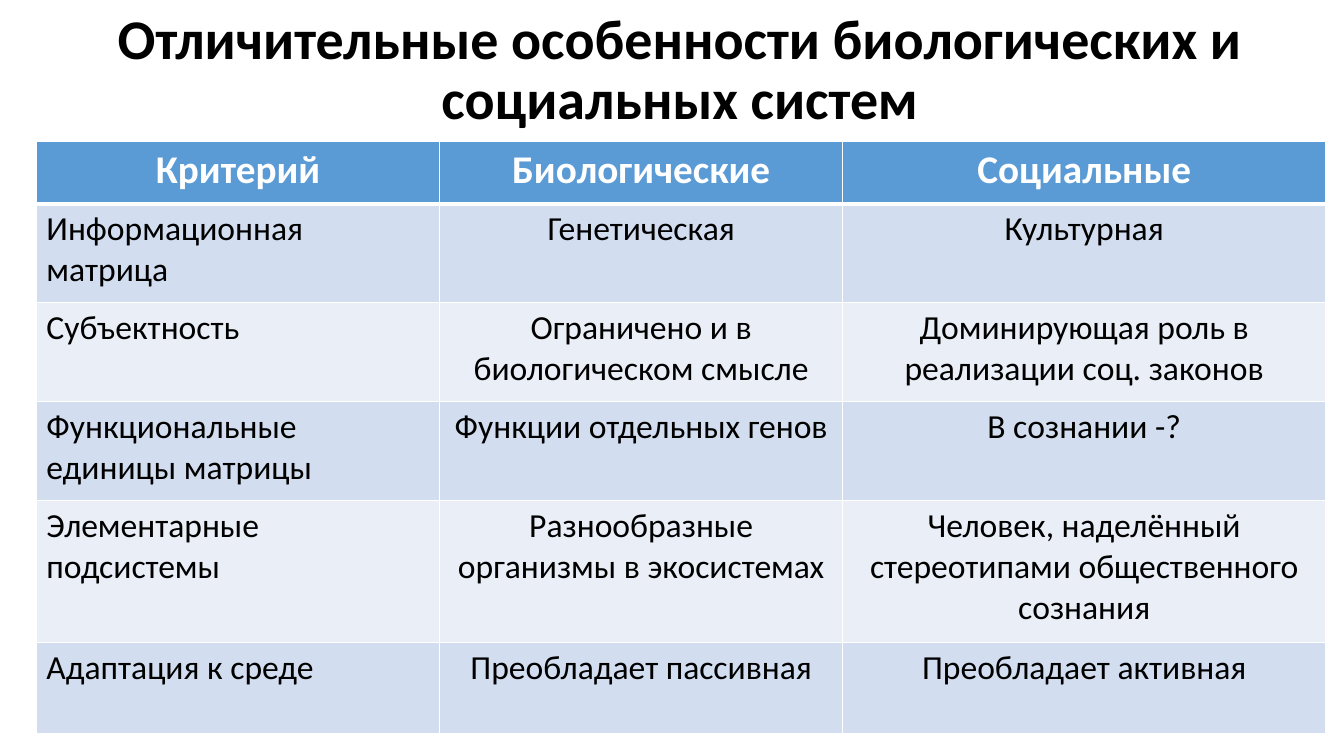
from lxml.etree import SubElement as Sub
from pptx import Presentation
from pptx.dml.color import RGBColor as Rgb
from pptx.enum.text import MSO_ANCHOR as Anchor, PP_ALIGN as Align
from pptx.oxml.ns import qn
from pptx.util import Pt

HUES = {"text": "000000", "white": "FFFFFF", "head": "5B9BD5",
        "odd": "D2DEEF", "even": "EAEFF7"}

COLS = [288, 288, 345]
HIGHS = [44.6, 70.6, 70.6, 70.6, 101.5, 65.5]
ROWS = [
    ("Критерий", "Биологические", "Социальные"),
    ("Информационная матрица", "Генетическая", "Культурная"),
    ("Субъектность", "Ограничено и в биологическом смысле",
     "Доминирующая роль в реализации соц. законов"),
    ("Функциональные единицы матрицы", "Функции отдельных генов",
     "В сознании -?"),
    ("Элементарные подсистемы", "Разнообразные организмы в экосистемах",
     "Человек, наделённый стереотипами общественного сознания"),
    ("Адаптация к среде", "Преобладает пассивная", "Преобладает активная"),
]
JUST = {1, 4}  # rows whose first cell is justified


class Deck:
    def __init__(self, slide, face="Calibri"):
        self.slide = slide
        self.face = face

    def style(self, para, size, hue, bold, align):
        para.alignment = align
        font = para.font
        font.name, font.size, font.bold = self.face, Pt(size), bold
        font.color.rgb = Rgb.from_string(HUES[hue])

    def title(self, text, *box):
        frame = self.slide.shapes.add_textbox(*map(Pt, box)).text_frame
        frame.word_wrap = True
        frame.vertical_anchor = Anchor.MIDDLE
        frame.text = text
        para = frame.paragraphs[0]
        para.line_spacing = 0.9
        self.style(para, 40, "text", True, Align.CENTER)

    def edges(self, cell, base):
        props = cell._tc.get_or_add_tcPr()
        sides = {"lnL": 1, "lnR": 1, "lnT": 1, "lnB": base}
        for spot, (side, width) in enumerate(sides.items()):
            line = Sub(props, qn(f"a:{side}"), w=str(Pt(width)))
            fill = Sub(line, qn("a:solidFill"))
            Sub(fill, qn("a:srgbClr"), val=HUES["white"])
            props.insert(spot, line)

    def cell(self, cell, text, row, col):
        head = row == 0
        hue = "head" if head else "odd" if row % 2 else "even"
        cell.fill.solid()
        cell.fill.fore_color.rgb = Rgb.from_string(HUES[hue])
        self.edges(cell, 3 if head else 1)
        cell.text = text
        align = Align.CENTER
        if col == 0 and not head:
            align = Align.JUSTIFY if row in JUST else Align.LEFT
        self.style(cell.text_frame.paragraphs[0], 28 if head else 24,
                   "white" if head else "text", head, align)

    def table(self, rows, left, top, wides, highs):
        box = map(Pt, (left, top, sum(wides), sum(highs)))
        grid = self.slide.shapes.add_table(
            len(rows), len(wides), *box).table
        for col, wide in zip(grid.columns, wides):
            col.width = Pt(wide)
        for row, high in zip(grid.rows, highs):
            row.height = Pt(high)
        for r, texts in enumerate(rows):
            for c, text in enumerate(texts):
                self.cell(grid.cell(r, c), text, r, c)


def main():
    show = Presentation()
    show.slide_width, show.slide_height = Pt(960), Pt(540)
    deck = Deck(show.slides.add_slide(show.slide_layouts[6]))

    # Heading
    deck.title("Отличительные особенности биологических и социальных систем",
               44, 9.4, 883, 83.5)

    # Comparison table
    deck.table(ROWS, 26, 101, COLS, HIGHS)

    show.save("out.pptx")


if __name__ == "__main__":
    main()
